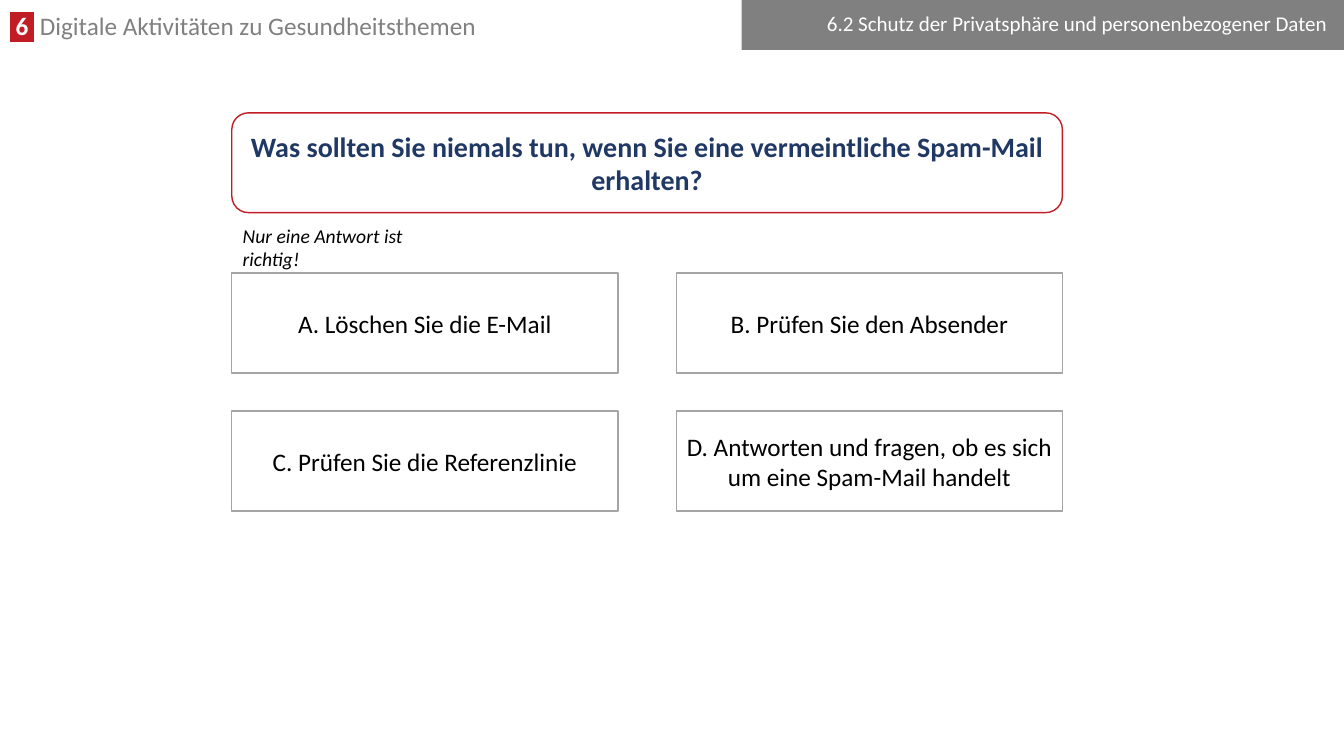
from dataclasses import dataclass, field
from typing import Any, Optional

from lxml.etree import SubElement
from pptx import Presentation
from pptx.dml.color import RGBColor as RGB
from pptx.enum.shapes import MSO_SHAPE as SHAPE
from pptx.enum.text import MSO_ANCHOR as ANCHOR, PP_ALIGN as ALIGN
from pptx.oxml.ns import qn
from pptx.util import Pt


@dataclass(frozen=True)
class Theme:
    font: str = "Calibri"
    white: str = "FFFFFF"
    black: str = "000000"
    red: str = "C01E24"
    navy: str = "203864"
    gray: str = "808080"
    border: str = "A5A5A5"
    question: float = 20
    body: float = 18
    section: float = 15
    note: float = 14


@dataclass(frozen=True)
class Run:
    text: str
    size: float
    color: str
    style: dict[str, bool] = field(default_factory=dict)
    highlight: Optional[str] = None


@dataclass(frozen=True)
class Box:
    left: float
    top: float
    width: float
    height: float
    runs: list[Run]
    kind: Optional[SHAPE] = None  # None makes a text box
    fill: Optional[str] = None
    line: Optional[str] = None
    frame: dict[str, Any] = field(default_factory=dict)
    para: dict[str, Any] = field(default_factory=dict)


T = Theme()


def set_all(target: Any, values: dict[str, Any]) -> None:
    for name, value in values.items():
        setattr(target, name, value)


def add_run(p: Any, run: Run) -> None:
    r = p.add_run()
    r.text = run.text
    set_all(r.font, {"name": T.font, "size": Pt(run.size), **run.style})
    r.font.color.rgb = RGB.from_string(run.color)
    if run.highlight:
        rPr = r.font._element
        mark = SubElement(rPr, qn("a:highlight"))
        SubElement(mark, qn("a:srgbClr"), val=run.highlight)
        rPr.find(qn("a:solidFill")).addnext(mark)


def draw(s: Any, box: Box) -> None:
    place = [Pt(v) for v in (box.left, box.top, box.width, box.height)]
    if box.kind is None:
        sp = s.shapes.add_textbox(*place)
    else:
        sp = s.shapes.add_shape(box.kind, *place)
        sp.shadow.inherit = False
        sp.fill.solid()
        sp.fill.fore_color.rgb = RGB.from_string(box.fill)
        if box.line:
            sp.line.color.rgb = RGB.from_string(box.line)
            sp.line.width = Pt(1)
        else:
            sp.line.fill.background()
    tf = sp.text_frame
    set_all(tf, {"word_wrap": True, **box.frame})
    p = tf.paragraphs[0]
    set_all(p, box.para)
    for run in box.runs:
        add_run(p, run)


# Answer grid and shared formats
LEFT, CARD_W, CARD_H = 165.6, 275.8, 71.3
GRID_TOP, COL_STEP, ROW_STEP = 195.1, 317.5, 98.6
MIDDLE = {"vertical_anchor": ANCHOR.MIDDLE}
CENTER = {"alignment": ALIGN.CENTER}
ANSWERS = [
    "A. Löschen Sie die E-Mail",
    "B. Prüfen Sie den Absender",
    "C. Prüfen Sie die Referenzlinie",
    "D. Antworten und fragen, ob es sich um eine Spam-Mail handelt",
]


def answer_box(i: int, text: str) -> Box:
    row, col = divmod(i, 2)
    return Box(LEFT + col * COL_STEP, GRID_TOP + row * ROW_STEP, CARD_W, CARD_H,
               [Run(text, T.body, T.black)], SHAPE.RECTANGLE, T.white, T.border,
               MIDDLE, CENTER)


# Chapter title
chapter = Box(0, 8, 685.4, 25.2, [
    Run(" 6 ", T.body, T.white, {"bold": True}, T.red),
    Run(" Digitale Aktivitäten zu Gesundheitsthemen", T.body, T.gray),
], para={"line_spacing": 0.8})

# Question
question = Box(
    LEFT, 80.6, COL_STEP + CARD_W, CARD_H,
    [Run("Was sollten Sie niemals tun, wenn Sie eine vermeintliche Spam-Mail erhalten?",
         T.question, T.navy, {"bold": True})],
    SHAPE.ROUNDED_RECTANGLE, T.white, T.red, MIDDLE, CENTER)

# Hint above the answers
hint = Box(166.3, 156.2, 169.9, 24.5,
           [Run("Nur eine Antwort ist richtig!", T.note, T.black, {"italic": True})])

# Section band
section = Box(
    529.7, 0, 430.3, 35.7,
    [Run("6.2 Schutz der Privatsphäre und personenbezogener Daten", T.section, T.white)],
    SHAPE.RECTANGLE, T.gray, None,
    {**MIDDLE, "margin_right": Pt(12)},
    {"alignment": ALIGN.RIGHT, "line_spacing": 0.9})


def main() -> None:
    prs = Presentation()
    prs.slide_width, prs.slide_height = Pt(960), Pt(540)
    s = prs.slides.add_slide(prs.slide_layouts[6])
    answers = [answer_box(i, text) for i, text in enumerate(ANSWERS)]
    for box in [chapter, question, *answers, hint, section]:
        draw(s, box)
    prs.save("out.pptx")


if __name__ == "__main__":
    main()
